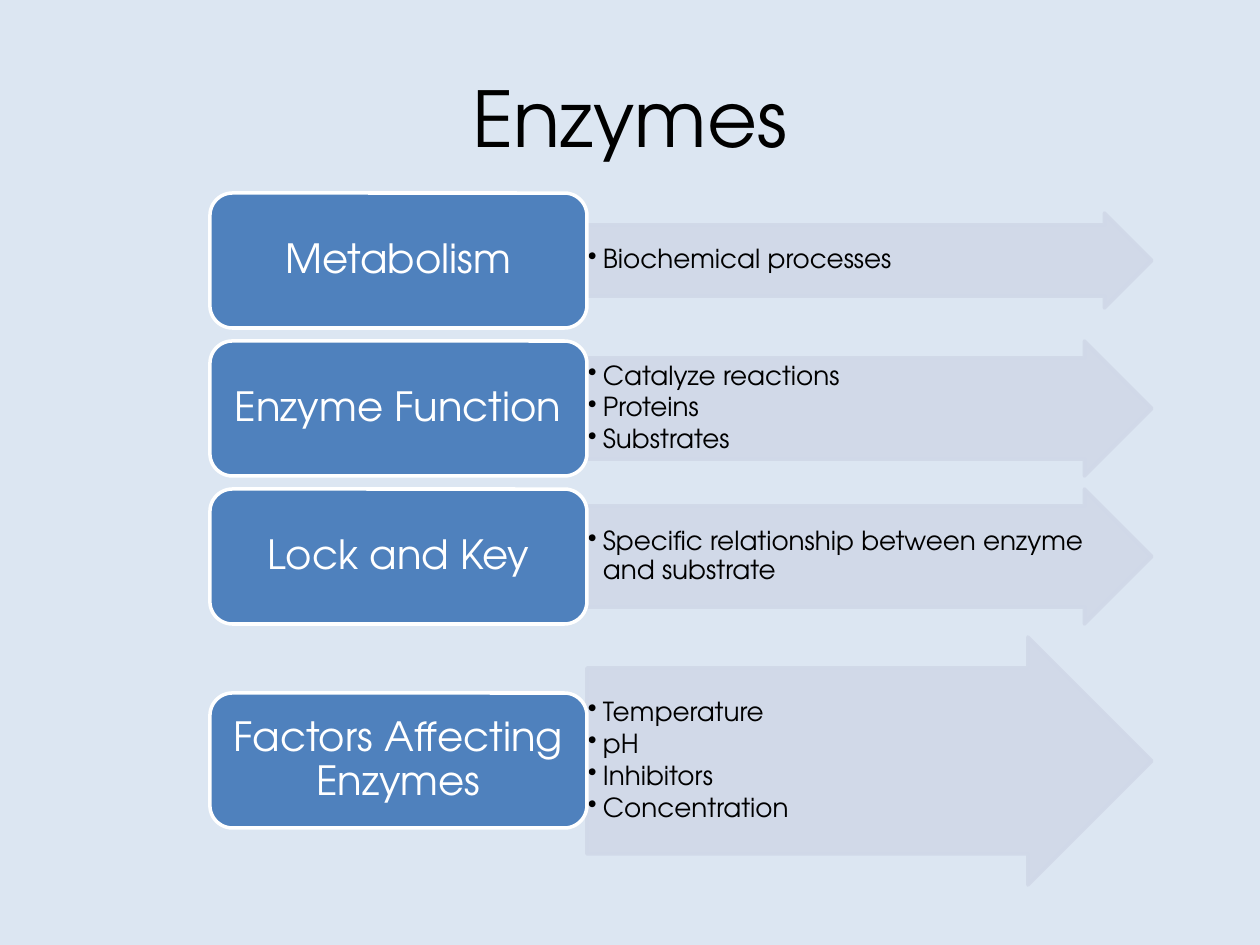
from lxml import etree
from pptx import Presentation
from pptx import util as u
from pptx.dml.color import RGBColor
from pptx.enum import shapes, text
from pptx.oxml.ns import qn

EMU_PER_PX = 914400 / 126

# Row layout, in px
TOP, GAP = 193, 13
LABEL_LEFT, LABEL_WIDTH, LABEL_HEIGHT = 210, 377, 135
ARROW_LEFT, ARROW_WIDTH = 587, 565

# Label, arrow height, bullet points
ROWS = [
    ("Metabolism", 95, ["Biochemical processes"]),
    ("Enzyme Function", 135, ["Catalyze reactions", "Proteins", "Substrates"]),
    ("Lock and Key", 135, ["Specific relationship between enzyme and substrate"]),
    ("Factors Affecting Enzymes", 248,
     ["Temperature", "pH", "Inhibitors", "Concentration"]),
]


def px(length):
    return u.Emu(round(length * EMU_PER_PX))


def color(value):
    return RGBColor.from_string(value)


class SlideBuilder:
    font = "TeX Gyre Adventor"
    black, white = "000000", "FFFFFF"
    blue, pale, background = "4F81BD", "D0D8E8", "DCE6F2"

    def __init__(self, deck):
        self.page = deck.slides.add_slide(deck.slide_layouts[6])
        fill = self.page.background.fill
        fill.solid()
        fill.fore_color.rgb = color(self.background)

    def set_text(self, shape, lines, size, ink, align, margins, spacing=1.0, bullets=False):
        frame = shape.text_frame
        frame.word_wrap = True
        frame.vertical_anchor = text.MSO_ANCHOR.MIDDLE
        frame.margin_left = frame.margin_right = px(margins[0])
        frame.margin_top = frame.margin_bottom = px(margins[1])
        frame.text = "\n".join(lines)
        for para in frame.paragraphs:
            para.alignment = align
            para.line_spacing = spacing
            if bullets:
                self.bullet(para)
            para.font.name = self.font
            para.font.size = u.Pt(size)
            para.font.color.rgb = color(ink)

    def bullet(self, para):
        para.space_after = u.Pt(2)
        properties = para._p.get_or_add_pPr()
        properties.set("marL", str(px(15)))
        properties.set("indent", str(-px(15)))
        etree.SubElement(properties, qn("a:buChar"), char="•")

    def shape(self, kind, left, top, width, height, fill, line, opacity=100):
        shape = self.page.shapes.add_shape(
            kind, px(left), px(top), px(width), px(height))
        shape.shadow.inherit = False
        shape.fill.solid()
        shape.fill.fore_color.rgb = color(fill)
        shape.line.color.rgb = color(line)
        shape.line.width = u.Pt(2)
        if opacity < 100:
            for tint in shape._element.spPr.iter(qn("a:srgbClr")):
                etree.SubElement(tint, qn("a:alpha"), val=str(opacity * 1000))
        return shape

    def title(self, words, left, top, width, height):
        box = self.page.shapes.add_textbox(px(left), px(top), px(width), px(height))
        self.set_text(box, [words], 44, self.black, text.PP_ALIGN.CENTER, (13, 6))

    def arrow(self, points, top, height):
        arrow = self.shape(shapes.MSO_SHAPE.RIGHT_ARROW, ARROW_LEFT, top,
                           ARROW_WIDTH, height, self.pale, self.pale, 90)
        arrow.adjustments[0] = 0.75
        arrow.adjustments[1] = 0.5
        self.set_text(arrow, points, 15, self.black, text.PP_ALIGN.LEFT, (1, 1), 0.9, True)

    def label(self, words, top):
        label = self.shape(shapes.MSO_SHAPE.ROUNDED_RECTANGLE, LABEL_LEFT, top,
                           LABEL_WIDTH, LABEL_HEIGHT, self.blue, self.white)
        self.set_text(label, [words], 23, self.white, text.PP_ALIGN.CENTER, (13, 6), 0.9)


def main():
    deck = Presentation()
    deck.slide_width, deck.slide_height = px(1260), px(945)
    slide = SlideBuilder(deck)

    slide.title("Enzymes", 63, 38, 1134, 158)

    # Each row is as tall as its larger part; both parts are centred in it
    top = TOP
    for words, arrow_height, points in ROWS:
        row_height = max(arrow_height, LABEL_HEIGHT)
        slide.arrow(points, top + (row_height - arrow_height) // 2, arrow_height)
        slide.label(words, top + (row_height - LABEL_HEIGHT) // 2)
        top += row_height + GAP

    deck.save("out.pptx")


if __name__ == "__main__":
    main()
